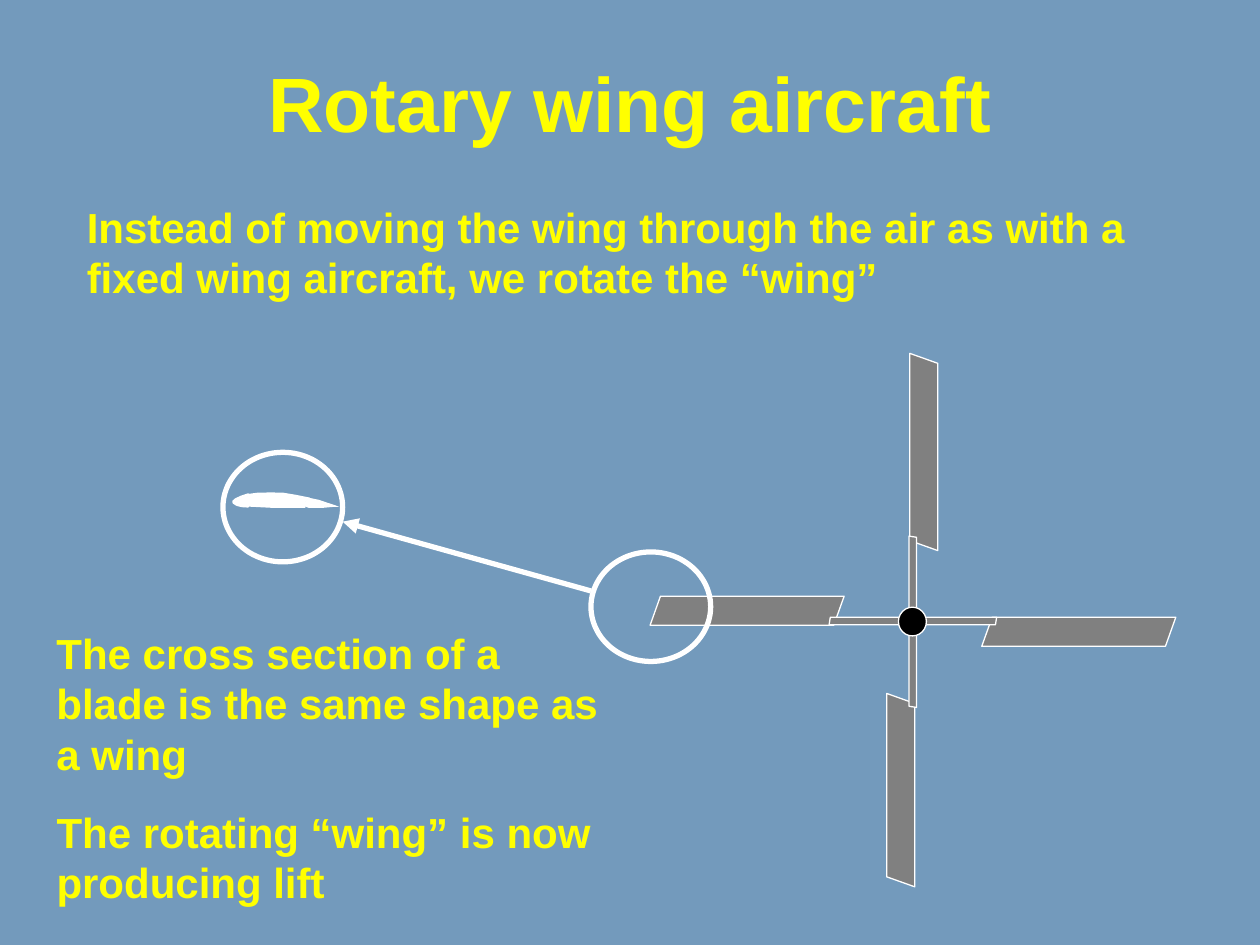
from lxml import etree
from pptx import Presentation
from pptx.dml.color import RGBColor
from pptx.enum.shapes import MSO_CONNECTOR, MSO_SHAPE
from pptx.enum.text import MSO_ANCHOR, MSO_AUTO_SIZE, PP_ALIGN
from pptx.oxml.ns import qn
from pptx.util import Pt

SKY = RGBColor(0x73, 0x9A, 0xBC)
YELLOW = RGBColor(0xFF, 0xFF, 0x00)
WHITE = RGBColor(0xFF, 0xFF, 0xFF)
GRAY = RGBColor(0x80, 0x80, 0x80)
BLACK = RGBColor(0x00, 0x00, 0x00)


def style_text(frame, text, size):
    frame.word_wrap = True
    frame.auto_size = MSO_AUTO_SIZE.SHAPE_TO_FIT_TEXT
    frame.text = text
    font = frame.paragraphs[0].font
    font.name = "Arial"
    font.size = Pt(size)
    font.bold = True
    font.color.rgb = YELLOW


def style_shape(shape, fill, line_width):
    shape.shadow.inherit = False
    if fill is None:
        shape.fill.background()
    else:
        shape.fill.solid()
        shape.fill.fore_color.rgb = fill
    if line_width is None:
        shape.line.fill.background()
    else:
        shape.line.color.rgb = WHITE
        shape.line.width = Pt(line_width)


deck = Presentation()
deck.slide_width, deck.slide_height = Pt(720), Pt(540)
slide = deck.slides.add_slide(deck.slide_layouts[5])
slide.background.fill.solid()
slide.background.fill.fore_color.rgb = SKY

title = slide.shapes.title
title.left, title.top, title.width, title.height = Pt(0), Pt(33.8), Pt(720), Pt(55.4)
style_text(title.text_frame, "Rotary wing aircraft", 44)
title.text_frame.vertical_anchor = MSO_ANCHOR.MIDDLE
title.text_frame.paragraphs[0].alignment = PP_ALIGN.CENTER
title.text_frame.paragraphs[0].line_spacing = 0.9

rotor = slide.shapes.add_group_shape()
BLADE_SKEW, LINK_SKEW = 0.358, 0.16
rotor_parts = [
    (0, BLADE_SKEW, 371.5, 340.7, 110.9, 16.6),
    (0, LINK_SKEW, 473.8, 352.7, 46.1, 4.3),
    (90, BLADE_SKEW, 471.5, 250.3, 112.7, 16),
    (90, LINK_SKEW, 498.2, 327.6, 46.8, 4.3),
    (270, BLADE_SKEW, 459.5, 443.5, 110.5, 16),
    (270, LINK_SKEW, 498.2, 378.7, 46.8, 4.3),
    (180, BLADE_SKEW, 561, 352.7, 110.9, 16.6),
    (180, LINK_SKEW, 523.4, 352.7, 46.1, 4.3),
]
for rotation, skew, left, top, width, height in rotor_parts:
    part = rotor.shapes.add_shape(
        MSO_SHAPE.PARALLELOGRAM, Pt(left), Pt(top), Pt(width), Pt(height))
    part.adjustments[0] = skew
    part.rotation = rotation
    style_shape(part, GRAY, 0)
hub = rotor.shapes.add_shape(MSO_SHAPE.OVAL, Pt(513.4), Pt(347), Pt(16), Pt(16.4))
style_shape(hub, BLACK, 0)

airfoil = slide.shapes.add_group_shape()
tail_section = [
    (176.4, 284.4), (182.2, 285.6), (187.2, 287.3), (191.5, 288.7), (193.7, 289.6),
    (190.1, 289.7), (184.3, 290.2), (176.4, 290.2), (174.2, 289.4), (174.2, 287),
]
middle_section = [
    (177.1, 284.4), (174.5, 287), (174.5, 290.2), (154.8, 290.2), (142.6, 289.6),
    (139.8, 287.6), (140.2, 285.4), (142.4, 282.2), (146.9, 281.6), (154.8, 281.4),
    (162, 281.6), (169.2, 282.8),
]
nose_section = [
    (141.8, 282.4), (140.2, 285.4), (139.8, 287.6), (141.8, 289.6), (138.2, 289.4),
    (135.4, 288.7), (133.4, 287.4), (133.3, 286.4), (134.6, 285.3), (137.5, 283.9),
]
sections = [(tail_section, None), (middle_section, None), (nose_section, 1)]
for outline, line_width in sections:
    corners = [(Pt(x), Pt(y)) for x, y in outline]
    builder = airfoil.shapes.build_freeform(*corners[0])
    builder.add_line_segments(corners[1:], close=True)
    style_shape(builder.convert_to_shape(), WHITE, line_width)

for left, top in [(127.4, 258.5), (337.7, 315.4)]:
    ring = slide.shapes.add_shape(MSO_SHAPE.OVAL, Pt(left), Pt(top), Pt(68.4), Pt(62.6))
    style_shape(ring, None, 3)

arrow = slide.shapes.add_connector(
    MSO_CONNECTOR.STRAIGHT, Pt(337.7), Pt(337.7), Pt(195.8), Pt(298.1))
arrow.line.color.rgb = WHITE
arrow.line.width = Pt(3)
etree.SubElement(arrow.line._get_or_add_ln(), qn("a:tailEnd"), type="triangle")
etree.SubElement(arrow._element.spPr, qn("a:effectLst"))

statements = [
    ("Instead of moving the wing through the air as with a fixed wing aircraft, "
     "we rotate the “wing”", 42.5, 111.6, 646.6, 65.5),
    ("The cross section of a blade is the same shape as a wing", 25.2, 355, 326.2, 94.3),
    ("The rotating “wing” is now producing lift", 25.2, 457.2, 368.6, 65.5),
]
for text, left, top, width, height in statements:
    statement = slide.shapes.add_textbox(Pt(left), Pt(top), Pt(width), Pt(height))
    style_text(statement.text_frame, text, 24)

deck.save("out.pptx")
